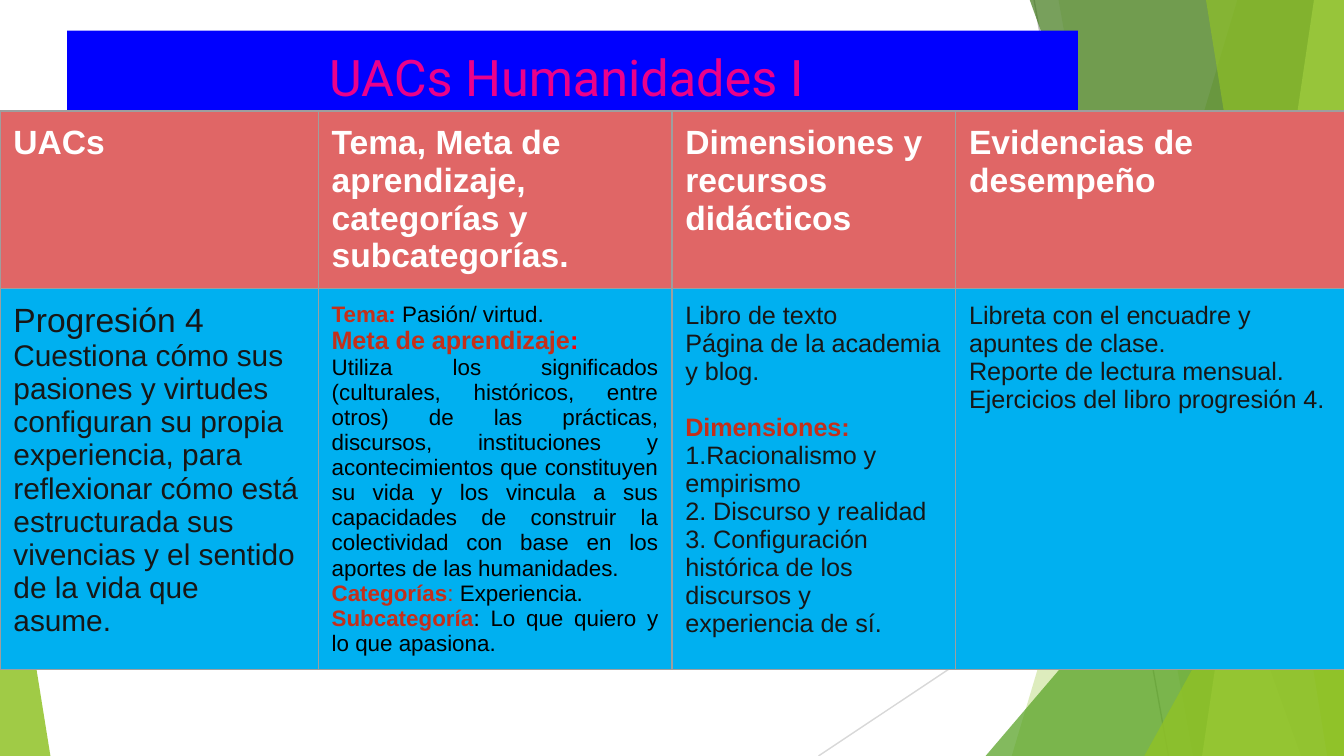
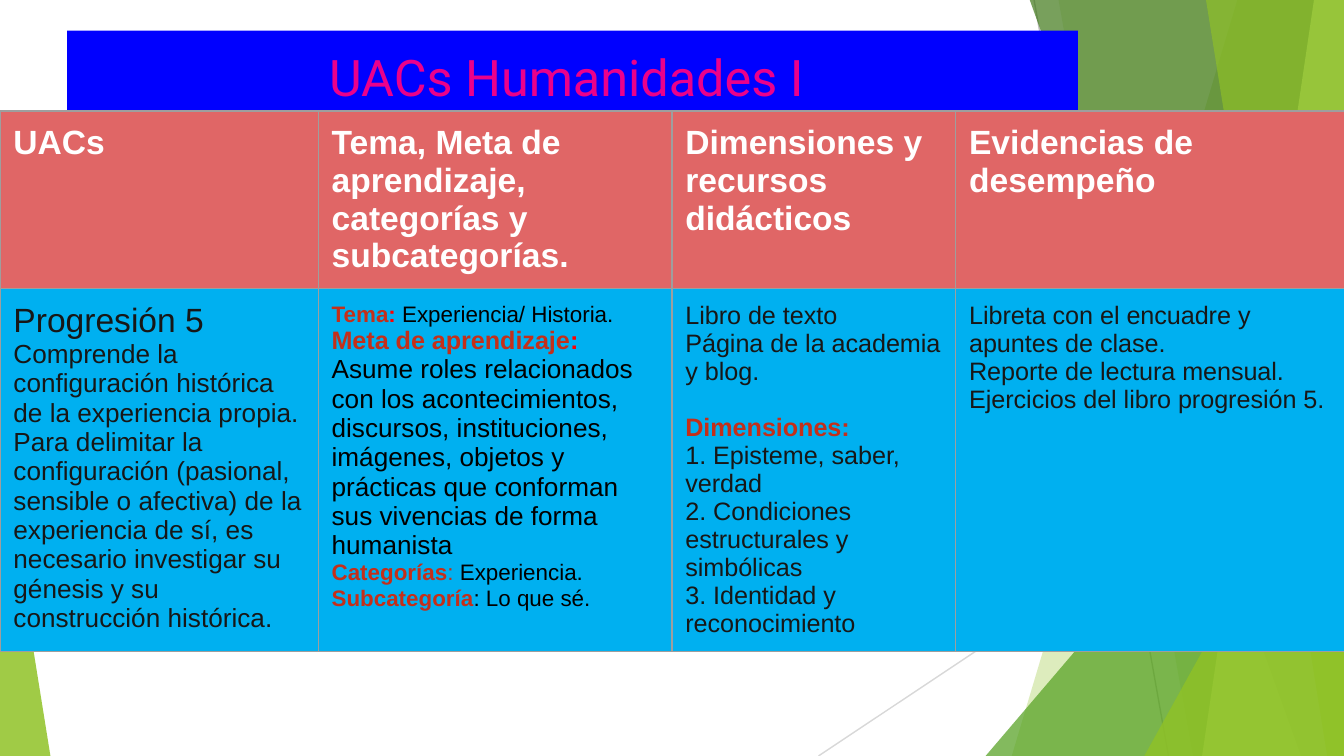
"""Builds two slides that plan the Humanidades I progressions in a table."""
from lxml.etree import SubElement
from pptx import Presentation
from pptx.dml.color import RGBColor
from pptx.enum.shapes import MSO_CONNECTOR as Connector, MSO_SHAPE as Shape
from pptx.enum.text import MSO_ANCHOR as Anchor, PP_ALIGN as Align
from pptx.oxml import parse_xml
from pptx.oxml.ns import nsdecls, qn
from pptx.util import Pt

WIDTH, HEIGHT = 720, 405
TITLE = "UACs Humanidades I "
HEADERS = ["UACs", "Tema, Meta de aprendizaje, categorías y subcategorías.",
           "Dimensiones y recursos didácticos", "Evidencias de desempeño"]
COLUMN_WIDTHS = [170.5, 189.5, 152, 211.5]
TABLE_TOP, HEADER_HEIGHT = 59.5, 95
LEFT, JUSTIFY = Align.LEFT, Align.JUSTIFY

TONES = {
    "dark": ("171717", False),
    "black": ("000000", False),
    "label": ("C42F1A", True),
    "thin": ("C42F1A", False),
    "colon": ("FF0000", True),
}

PROGRESSIONS = [
    {
        "number": 4, "height": 203.5, "summary_size": 16,
        "summary": "Cuestiona cómo sus pasiones y virtudes configuran su propia experiencia, "
                   "para reflexionar cómo está estructurada sus vivencias y el sentido de la "
                   "vida que asume.",
        "topic": "Pasión/ virtud.",
        "goal_size": 12, "goal_align": JUSTIFY,
        "goal": "Utiliza los significados (culturales, históricos, entre otros) de las "
                "prácticas, discursos, instituciones y acontecimientos que constituyen su vida "
                "y los vincula a sus capacidades de construir la colectividad con base en los "
                "aportes de las humanidades.",
        "subcategory": "Lo que quiero y lo que apasiona.",
        "dimensions": ["1.Racionalismo y empirismo", "2. Discurso y realidad",
                       "3. Configuración histórica de los discursos y experiencia de sí."],
    },
    {
        "number": 5, "height": 194.5, "summary_size": 14,
        "summary": "Comprende la configuración histórica de la experiencia propia. Para "
                   "delimitar la configuración (pasional, sensible o afectiva) de la "
                   "experiencia de sí, es necesario investigar su génesis y su construcción "
                   "histórica.",
        "topic": "Experiencia/ Historia.",
        "goal_size": 14, "goal_align": LEFT,
        "goal": "Asume roles relacionados con los acontecimientos, discursos, instituciones, "
                "imágenes, objetos y prácticas que conforman sus vivencias de forma humanista",
        "subcategory": "Lo que sé.",
        "dimensions": ["1. Episteme, saber, verdad",
                       "2. Condiciones estructurales y simbólicas",
                       "3. Identidad y reconocimiento"],
    },
]
RESOURCES = ["Libro de texto", "Página de la academia y blog."]
EVIDENCE = ["Libreta con el encuadre y apuntes de clase.", "Reporte de lectura mensual."]

BACK_LINES = [((554, 0), (626, HEIGHT), "BFBFBF"), ((WIDTH, 217.5), (438.5, HEIGHT), "D8D8D8")]
FACETS = [
    ("band", (663, 542), "90C226", 30),
    ("band", (567, 639), "90C226", 20),
    ("triangle", (528, 180, 192, 1), "54A021", 72),
    ("band", (551.5, 697), "3F7818", 70),
    ("band", (704, 644), "BFE471", 70),
    ("band", (646, 711), "90C226", 65),
    ("triangle", (613, 212, 107, 1), "90C226", 80),
    ("triangle", (0, 237, 27, 0), "90C226", 85),
]


def color(hex_string):
    """Turn a hex string into a colour."""
    return RGBColor.from_string(hex_string)


def paint(shape, fill, opacity=100):
    """Give a shape a plain fill with no line and no shadow."""
    shape.shadow.inherit = False
    shape.line.fill.background()
    shape.fill.solid()
    shape.fill.fore_color.rgb = color(fill)
    if opacity < 100:
        tint = shape.fill._xPr.find(qn("a:solidFill"))[0]
        SubElement(tint, qn("a:alpha"), val=str(opacity * 1000))


def add_run(paragraph, text, size=18, tint="FFFFFF", bold=False, font="Arial"):
    """Add formatted text to a paragraph."""
    run = paragraph.add_run()
    run.text = text
    run.font.size, run.font.bold, run.font.name = Pt(size), bold, font
    run.font.color.rgb = color(tint)


def add_backdrop(slide):
    """Draw the thin lines and green facets behind the content."""
    for start, end, tint in BACK_LINES:
        line = slide.shapes.add_connector(Connector.STRAIGHT, *map(Pt, start + end))
        line.line.color.rgb, line.line.width = color(tint), Pt(0.75)
        SubElement(line._element.spPr, qn("a:effectLst"))
    for kind, place, fill, opacity in FACETS:
        if kind == "band":
            top_x, bottom_x = place
            builder = slide.shapes.build_freeform(Pt(top_x), Pt(-0.5))
            corners = [(WIDTH, -0.5), (WIDTH, HEIGHT), (bottom_x, HEIGHT)]
            builder.add_line_segments([(Pt(x), Pt(y)) for x, y in corners], close=True)
            facet = builder.convert_to_shape()
        else:
            left, top, width, apex = place
            facet = slide.shapes.add_shape(Shape.ISOSCELES_TRIANGLE, Pt(left), Pt(top),
                                           Pt(width), Pt(HEIGHT - top))
            facet.adjustments[0] = apex
        paint(facet, fill, opacity)


def add_title(slide):
    """Draw the blue title bar."""
    bar = slide.shapes.add_shape(Shape.RECTANGLE, Pt(36), Pt(16.5), Pt(541.5), Pt(53))
    paint(bar, "0000FF")
    frame = bar.text_frame
    frame.word_wrap, frame.vertical_anchor = True, Anchor.MIDDLE
    frame.margin_left = frame.margin_right = frame.margin_top = frame.margin_bottom = Pt(7.2)
    paragraph = frame.paragraphs[0]
    paragraph.alignment, paragraph.line_spacing = Align.CENTER, 0.9
    add_run(paragraph, TITLE, size=27, tint="EB008B", font="Roboto")


def body_cells(plan):
    """List each cell's paragraphs as size, alignment, space before and runs."""
    def plain(size, text, tone="dark", before=0):
        """Describe a left-aligned paragraph with a single run."""
        return size, LEFT, before, [(text, tone)]

    summary = [plain(18, f"Progresión {plan['number']}"),
               plain(plan["summary_size"], plan["summary"])]
    topic = [
        (12, LEFT, 0, [("Tema", "label"), (":", "colon"), (" " + plan["topic"], "black")]),
        (13.5, LEFT, 0, [("Meta de aprendizaje", "label"), (":", "colon")]),
        (plan["goal_size"], plan["goal_align"], 0, [(plan["goal"], "black")]),
        (12, JUSTIFY, 0, [("Categorías", "label"), (":", "thin"), (" Experiencia.", "black")]),
        (12, JUSTIFY, 0, [("Subcategoría", "label"), (": " + plan["subcategory"], "black")]),
    ]
    resources = [plain(13.5, text) for text in RESOURCES]
    resources.append(plain(13.5, "Dimensiones:", "label", before=15))
    resources += [plain(13.5, text) for text in plan["dimensions"]]
    exercises = f"Ejercicios del libro progresión {plan['number']}."
    evidence = [plain(13.5, text) for text in EVIDENCE + [exercises]]
    return [summary, topic, resources, evidence]


def style_cell(cell, fill):
    """Set a cell's fill, margins and thin grey borders."""
    cell.fill.solid()
    cell.fill.fore_color.rgb = color(fill)
    cell.margin_left = cell.margin_right = cell.margin_top = cell.margin_bottom = Pt(7.2)
    properties = cell._tc.get_or_add_tcPr()
    for index, side in enumerate("LRTB"):
        properties.insert(index, parse_xml(
            f'<a:ln{side} {nsdecls("a")} w="9525"><a:solidFill><a:srgbClr val="9E9E9E"/>'
            f'</a:solidFill></a:ln{side}>'))


def add_plan_table(slide, plan):
    """Add the table with its header row and one progression."""
    heights = [HEADER_HEIGHT, plan["height"]]
    table = slide.shapes.add_table(2, len(HEADERS), Pt(0), Pt(TABLE_TOP),
                                   Pt(sum(COLUMN_WIDTHS)), Pt(sum(heights))).table
    table.first_row = table.horz_banding = False
    for row, height in zip(table.rows, heights):
        row.height = Pt(height)
    for index, (header, content) in enumerate(zip(HEADERS, body_cells(plan))):
        table.columns[index].width = Pt(COLUMN_WIDTHS[index])
        head, body = table.cell(0, index), table.cell(1, index)
        style_cell(head, "E06666")
        style_cell(body, "00B0F0")
        add_run(head.text_frame.paragraphs[0], header, bold=True)
        frame = body.text_frame
        for position, (size, alignment, before, runs) in enumerate(content):
            paragraph = frame.add_paragraph() if position else frame.paragraphs[0]
            paragraph.alignment, paragraph.space_before = alignment, Pt(before)
            for text, tone in runs:
                tint, bold = TONES[tone]
                add_run(paragraph, text, size=size, tint=tint, bold=bold)


def main():
    """Build and save the presentation."""
    presentation = Presentation()
    presentation.slide_width, presentation.slide_height = Pt(WIDTH), Pt(HEIGHT)
    for plan in PROGRESSIONS:
        slide = presentation.slides.add_slide(presentation.slide_layouts[6])
        add_backdrop(slide)
        add_title(slide)
        add_plan_table(slide, plan)
    presentation.save("out.pptx")


if __name__ == "__main__":
    main()
